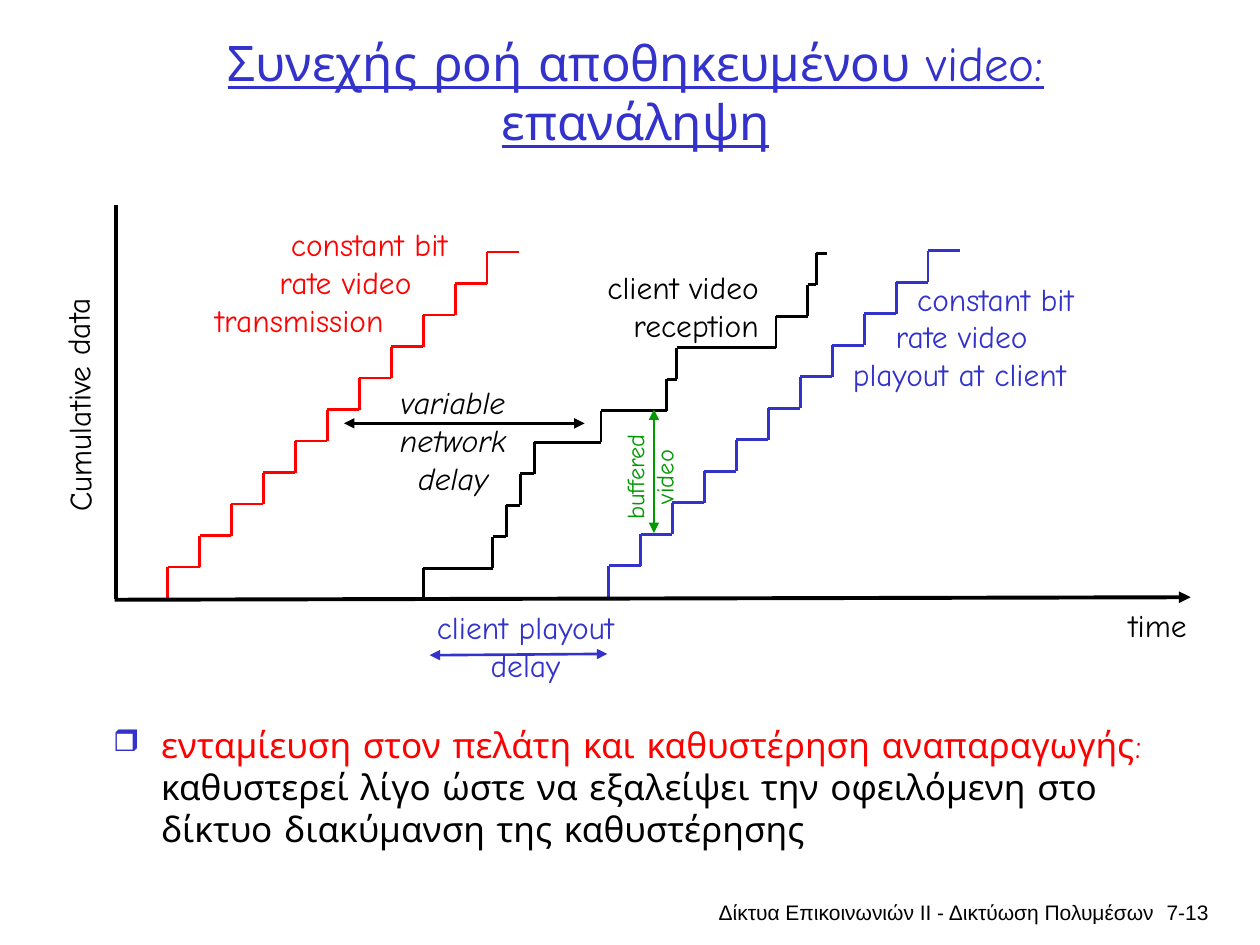
from dataclasses import dataclass

from lxml import etree
from pptx import Presentation
from pptx.dml.color import RGBColor
from pptx.enum import shapes, text
from pptx.oxml.ns import qn
from pptx.util import Inches, Pt

BLACK, RED, BLUE, GREEN = "000000", "FF0000", "3333CC", "009900"
LEFT, CENTER, RIGHT = text.PP_ALIGN.LEFT, text.PP_ALIGN.CENTER, text.PP_ALIGN.RIGHT
STEPS = 11
RISE = 0.25


@dataclass
class Staircase:
    edges: list[float]
    bottom: float
    color: str


@dataclass
class Line:
    start: tuple[float, float]
    end: tuple[float, float]
    color: str = BLACK
    width: float = 1.5
    arrows: tuple[str, ...] = ("headEnd", "tailEnd")


@dataclass
class Label:
    box: tuple[float, float, float, float]
    lines: list[str]
    color: str = BLACK
    size: int = 18
    align: text.PP_ALIGN = LEFT
    font: str = "Comic Neue"
    italic: bool = False
    rotation: float = 0
    indents: tuple[float, ...] = ()


def even_edges(left: float, right: float) -> list[float]:
    return [left + (right - left) * i / STEPS for i in range(STEPS + 1)]


STAIRCASES = [
    Staircase(even_edges(1.33, 4.12), 4.75, RED),
    Staircase([3.36, 3.91, 4.02, 4.13, 4.24, 4.77, 5.29, 5.37, 6.16, 6.41, 6.48, 6.56],
              4.76, BLACK),
    Staircase(even_edges(4.83, 7.62), 4.74, BLUE),
]

LINES = [
    Line((0.92, 1.63), (0.92, 4.75), width=2.25, arrows=()),
    Line((0.91, 4.76), (9.45, 4.74), width=2.25, arrows=("tailEnd",)),
    Line((2.73, 3.36), (4.64, 3.36)),
    Line((3.41, 5.2), (4.82, 5.19), BLUE),
    Line((5.19, 4.23), (5.19, 3.25), GREEN),
]

LABELS = [
    Label((1.61, 1.74, 2.22, 1), ["constant bit", "rate video", "transmission"], RED,
          indents=(0.6, 0.51, 0)),
    Label((-0.45, 2.89, 2.14, 0.4), ["Cumulative data"], rotation=269.4),
    Label((8.86, 4.76, 0.72, 0.4), ["time"]),
    Label((3.02, 2.99, 1.15, 1), ["variable", "network", "delay"], align=CENTER, italic=True),
    Label((4.59, 2.08, 1.53, 0.7), ["client video", "reception"], align=RIGHT),
    Label((6.58, 2.17, 2.22, 1), ["constant bit", "rate video", "playout at client"], BLUE,
          indents=(0.6, 0.43, 0.09)),
    Label((3.25, 4.78, 1.84, 0.7), ["client playout", "delay"], BLUE, align=CENTER),
    Label((4.64, 3.5, 1.03, 0.57), ["buffered", "video"], GREEN, 14, CENTER, rotation=270),
    Label((4.54, 7.09, 4.72, 0.5), ["Δίκτυα Επικοινωνιών ΙΙ - Δικτύωση Πολυμέσων"],
          size=12, align=RIGHT, font="Arial"),
    Label((8.95, 7.09, 0.74, 0.5), ["7-13"], size=12, align=RIGHT, font="Arial"),
]


def set_font(font, size: int, color: str, name: str = "Comic Neue") -> None:
    font.size = Pt(size)
    font.name = name
    font.color.rgb = RGBColor.from_string(color)


def add_line(slide, line: Line) -> None:
    connector = slide.shapes.add_connector(
        shapes.MSO_CONNECTOR.STRAIGHT, *map(Inches, line.start + line.end))
    connector.line.color.rgb = RGBColor.from_string(line.color)
    connector.line.width = Pt(line.width)
    properties = connector._element.spPr
    for arrow in line.arrows:
        etree.SubElement(properties.find(qn("a:ln")), qn(f"a:{arrow}"), type="triangle")
    etree.SubElement(properties, qn("a:effectLst"))


def add_staircase(slide, stairs: Staircase) -> None:
    """Climb one riser and one tread between each pair of edges."""
    y = stairs.bottom
    for left, right in zip(stairs.edges, stairs.edges[1:]):
        top = y - RISE
        add_line(slide, Line((left, y), (left, top), stairs.color, arrows=()))
        add_line(slide, Line((left, top), (right, top), stairs.color, arrows=()))
        y = top


def add_frame(slide, box: tuple[float, float, float, float]):
    shape = slide.shapes.add_textbox(*map(Inches, box))
    shape.text_frame.word_wrap = True
    return shape


def add_label(slide, label: Label) -> None:
    shape = add_frame(slide, label.box)
    shape.rotation = label.rotation
    frame = shape.text_frame
    frame.text = "\n".join(label.lines)
    for paragraph in frame.paragraphs:
        paragraph.alignment = label.align
        set_font(paragraph.font, label.size, label.color, label.font)
        paragraph.font.italic = label.italic
    for paragraph, indent in zip(frame.paragraphs, label.indents):
        paragraph._p.get_or_add_pPr().set("marL", str(Inches(indent)))


def add_title(slide) -> None:
    title = slide.shapes.title
    title.left, title.top, title.width, title.height = map(Inches, (0.58, 0.25, 8.93, 0.95))
    frame = title.text_frame
    frame.text = "Συνεχής ροή αποθηκευμένου video: επανάληψη"
    frame.auto_size = text.MSO_AUTO_SIZE.NONE
    frame.vertical_anchor = text.MSO_ANCHOR.MIDDLE
    heading = frame.paragraphs[0]
    heading.alignment = CENTER
    set_font(heading.font, 28, BLUE)
    heading.font.underline = True


def add_summary(slide) -> None:
    summary = add_frame(slide, (0.8, 5.69, 8.5, 1.36)).text_frame.paragraphs[0]
    properties = summary._p.get_or_add_pPr()
    properties.set("marL", str(Inches(0.38)))
    properties.set("indent", str(Inches(-0.38)))
    bullet_color = etree.SubElement(properties, qn("a:buClr"))
    etree.SubElement(bullet_color, qn("a:srgbClr"), val=BLUE)
    etree.SubElement(properties, qn("a:buSzPct"), val="85000")
    etree.SubElement(properties, qn("a:buChar"), char="❒")
    for words, color in (
        ("ενταμίευση στον πελάτη και καθυστέρηση αναπαραγωγής:", RED),
        (" καθυστερεί λίγο ώστε να εξαλείψει την οφειλόμενη στο δίκτυο "
         "διακύμανση της καθυστέρησης", BLACK),
    ):
        run = summary.add_run()
        run.text = words
        set_font(run.font, 20, color)


def main() -> None:
    deck = Presentation()
    deck.slide_width, deck.slide_height = Inches(10), Inches(7.5)
    slide = deck.slides.add_slide(deck.slide_layouts.get_by_name("Title Only"))
    add_title(slide)
    for stairs in STAIRCASES:
        add_staircase(slide, stairs)
    for line in LINES:
        add_line(slide, line)
    for label in LABELS:
        add_label(slide, label)
    add_summary(slide)
    deck.save("out.pptx")


if __name__ == "__main__":
    main()
